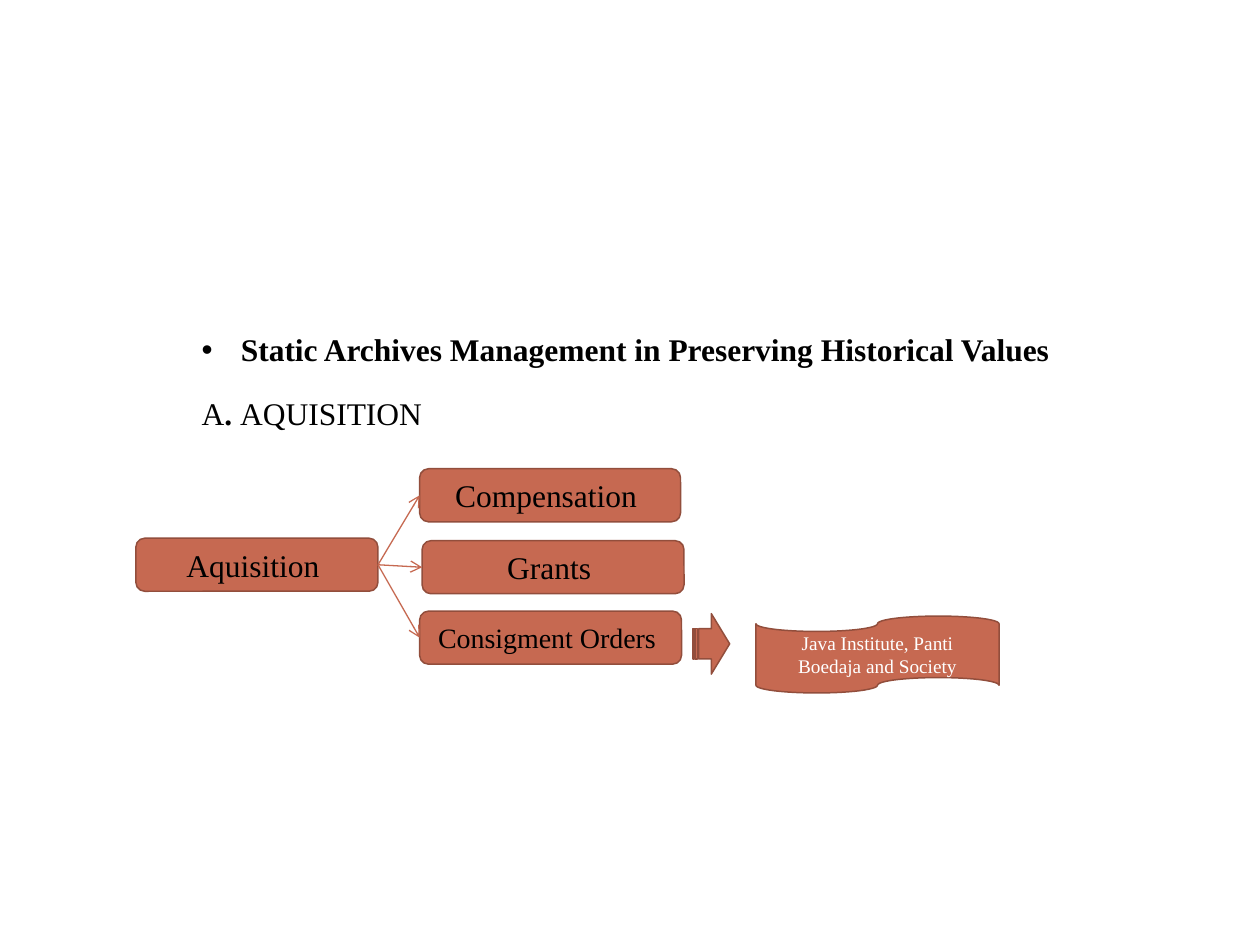
from lxml.etree import SubElement
from pptx import Presentation
from pptx.dml.color import RGBColor
from pptx.enum.shapes import MSO_CONNECTOR, MSO_SHAPE
from pptx.enum.text import MSO_ANCHOR, MSO_AUTO_SIZE, PP_ALIGN
from pptx.oxml.ns import qn
from pptx.util import Cm, Pt

COLORS = {"fill": "C66951", "outline": "924E3C", "dark": "000000", "light": "FFFFFF"}
FONT = "Times New Roman"


def add_run(paragraph, text, size, color, bold=False):
    run = paragraph.add_run()
    run.text = text
    run.font.name = FONT
    run.font.size = Pt(size)
    run.font.bold = bold
    run.font.color.rgb = RGBColor.from_string(COLORS[color])


def add_block(kind, left, top, width, height, text="", size=18, color="dark"):
    shape = slide.shapes.add_shape(kind, Cm(left), Cm(top), Cm(width), Cm(height))
    shape.shadow.inherit = False
    shape.fill.solid()
    shape.fill.fore_color.rgb = RGBColor.from_string(COLORS["fill"])
    shape.line.color.rgb = RGBColor.from_string(COLORS["outline"])
    shape.line.width = Pt(0.85)
    if text:
        shape.text_frame.word_wrap = True
        shape.text_frame.vertical_anchor = MSO_ANCHOR.MIDDLE
        paragraph = shape.text_frame.paragraphs[0]
        paragraph.alignment = PP_ALIGN.CENTER
        add_run(paragraph, text, size, color)
    return shape


presentation = Presentation()
presentation.slide_width = Cm(25.4)
presentation.slide_height = Cm(19.05)
slide = presentation.slides.add_slide(presentation.slide_layouts[1])
title = slide.shapes.title.element
title.getparent().remove(title)

body = slide.placeholders[1]
body.left, body.top, body.width, body.height = Cm(3.81), Cm(6.15), Cm(17.78), Cm(9.09)
body.text_frame.word_wrap = True
body.text_frame.auto_size = MSO_AUTO_SIZE.NONE

heading = body.text_frame.paragraphs[0]
heading_properties = heading._p.get_or_add_pPr()
heading_properties.set("marL", str(Cm(0.79)))
heading_properties.set("indent", str(-Cm(0.79)))
SubElement(heading_properties, qn("a:buChar")).set("char", "•")
heading.line_spacing = 1.5
heading.space_before = Pt(0)
add_run(heading, "Static Archives Management in Preserving Historical Values", 18, "dark", True)

section = body.text_frame.add_paragraph()
section_properties = section._p.get_or_add_pPr()
section_properties.set("marL", "0")
section_properties.set("indent", "0")
SubElement(section_properties, qn("a:buNone"))
section.line_spacing = 1.5
section.space_before = Pt(4)
for text, bold in [("A", False), (". ", True), ("AQUISITION", False)]:
    add_run(section, text, 18, "dark", bold)

process = MSO_SHAPE.FLOWCHART_ALTERNATE_PROCESS
acquisition = add_block(process, 2.74, 10.85, 4.88, 1.07, "Aquisition ")
methods = [
    add_block(process, left, top, width, 1.07, text, size)
    for text, left, top, width, size in [
        ("Consigment Orders ", 8.46, 12.32, 5.28, 16),
        ("Grants ", 8.51, 10.9, 5.28, 18),
        ("Compensation ", 8.46, 9.45, 5.26, 18),
    ]
]
add_block(MSO_SHAPE.STRIPED_RIGHT_ARROW, 13.97, 12.37, 0.74, 1.22)
add_block(MSO_SHAPE.FLOWCHART_PUNCHED_TAPE, 15.24, 12.42, 4.9, 1.55,
          "Java Institute, Panti Boedaja and Society", 11, "light")

for method in reversed(methods):
    connector = slide.shapes.add_connector(MSO_CONNECTOR.STRAIGHT, 0, 0, 0, 0)
    connector.begin_connect(acquisition, 3)
    connector.end_connect(method, 1)
    connector.line.color.rgb = RGBColor.from_string(COLORS["fill"])
    connector.line.width = Pt(0.75)
    SubElement(connector.line._get_or_add_ln(), qn("a:tailEnd")).set("type", "arrow")
    SubElement(connector.element.spPr, qn("a:effectLst"))

presentation.save("out.pptx")
